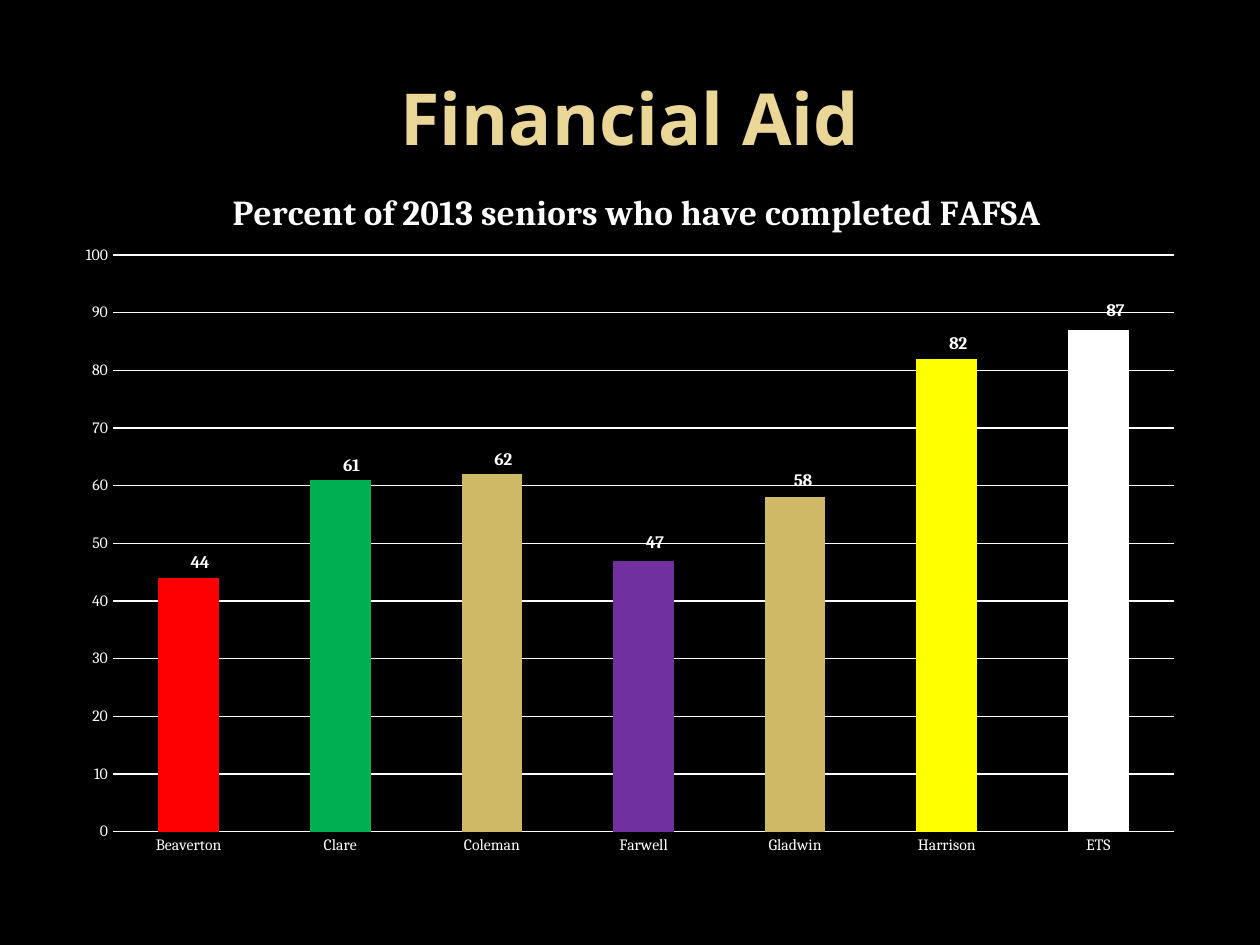
from lxml.etree import SubElement
from pptx import Presentation
from pptx.chart.data import CategoryChartData
from pptx.dml.color import RGBColor
from pptx.enum.chart import XL_CHART_TYPE, XL_LABEL_POSITION, XL_TICK_MARK
from pptx.enum.text import MSO_ANCHOR, PP_ALIGN
from pptx.oxml.ns import qn
from pptx.util import Pt

TITLE = "Financial Aid"
CHART_TITLE = "Percent of 2013 seniors who have completed FAFSA"
COLORS = {"background": "000000", "title": "EAD696", "text": "FFFFFF",
          "red": "FF0000", "green": "00B050", "gold": "CEB966",
          "purple": "7030A0", "yellow": "FFFF00", "white": "FFFFFF"}
# school, percent, bar colour, label shift as a fraction of the chart size
SCHOOLS = [
    ("Beaverton", 44, "red", (0.01, 0)),
    ("Clare", 61, "green", (0.01, 0)),
    ("Coleman", 62, "gold", (0.01, 0)),
    ("Farwell", 47, "purple", (0.01, -0.005)),
    ("Gladwin", 58, "gold", (0.007, -0.003)),
    ("Harrison", 82, "yellow", (0.01, 0)),
    ("ETS", 87, "white", (0.015, -0.007)),
]
TITLE_BOX = (36, 21.6, 648, 90)
CHART_BOX = (36, 90, 648, 406.8)


def rgb(name):
    return RGBColor.from_string(COLORS[name])


def style(font, size, bold=False, color="text", name="Cambria"):
    font.size, font.bold, font.name = Pt(size), bold, name
    font.color.rgb = rgb(color)


def place(parent, index, **parts):
    """Give a chart part a manual layout, in fractions of the chart."""
    for old in parent.findall(qn("c:layout")):
        parent.remove(old)
    layout = SubElement(parent, qn("c:layout"))
    parent.insert(index, layout)
    manual = SubElement(layout, qn("c:manualLayout"))
    for tag, value in parts.items():
        SubElement(manual, qn(f"c:{tag}")).set("val", str(value))


def add_title(slide):
    sp = slide.shapes.title
    sp.left, sp.top, sp.width, sp.height = map(Pt, TITLE_BOX)
    tf = sp.text_frame
    tf.text = TITLE
    tf.vertical_anchor = MSO_ANCHOR.MIDDLE
    p = tf.paragraphs[0]
    p.alignment = PP_ALIGN.CENTER
    style(p.font, 41, True, "title", "Noto Sans")


def add_bars(slide):
    data = CategoryChartData()
    data.categories = [school[0] for school in SCHOOLS]
    data.add_series("Series 1", [school[1] for school in SCHOOLS])
    chart = slide.shapes.add_chart(
        XL_CHART_TYPE.COLUMN_CLUSTERED, *map(Pt, CHART_BOX), data).chart
    style(chart.font, 10)
    chart.has_legend = False

    chart.has_title = True
    tf = chart.chart_title.text_frame
    tf.text = CHART_TITLE
    style(tf.paragraphs[0].font, 20, True)
    title = chart._chartSpace.find(".//" + qn("c:title"))
    place(title, 1, xMode="edge", yMode="edge", x=0.144, y=0.037)
    plot_area = chart._chartSpace.find(".//" + qn("c:plotArea"))
    place(plot_area, 0, layoutTarget="inner", xMode="edge", yMode="edge",
          x=0.044, y=0.137, w=0.936, h=0.81)

    for axis in (chart.category_axis, chart.value_axis):
        axis.major_tick_mark = axis.minor_tick_mark = XL_TICK_MARK.NONE
        axis.format.line.fill.background()
        style(axis.tick_labels.font, 9)
    axis = chart.value_axis
    axis.minimum_scale, axis.maximum_scale, axis.major_unit = 0, 100, 10
    grid = axis.major_gridlines.format.line
    grid.width = Pt(0.75)
    grid.color.rgb = rgb("text")

    plot = chart.plots[0]
    plot.gap_width = 150
    plot.vary_by_categories = False
    series = plot.series[0]
    series.format.fill.solid()
    series.format.fill.fore_color.rgb = rgb("gold")
    series.data_labels.show_value = True
    style(series.data_labels.font, 10, True)
    for i, (_, _, color, _) in enumerate(SCHOOLS):
        point = series.points[i]
        point.format.fill.solid()
        point.format.fill.fore_color.rgb = rgb(color)
        style(point.data_label.font, 10, True)
        point.data_label.position = XL_LABEL_POSITION.OUTSIDE_END
    labels = chart._chartSpace.iter(qn("c:dLbl"))
    for label, (_, _, _, (x, y)) in zip(labels, SCHOOLS):
        place(label, 1, x=x, y=y)


def main():
    prs = Presentation()
    prs.slide_width, prs.slide_height = Pt(720), Pt(540)
    slide = prs.slides.add_slide(prs.slide_layouts[5])
    slide.background.fill.solid()
    slide.background.fill.fore_color.rgb = rgb("background")
    add_title(slide)
    add_bars(slide)
    prs.save("out.pptx")


if __name__ == "__main__":
    main()
